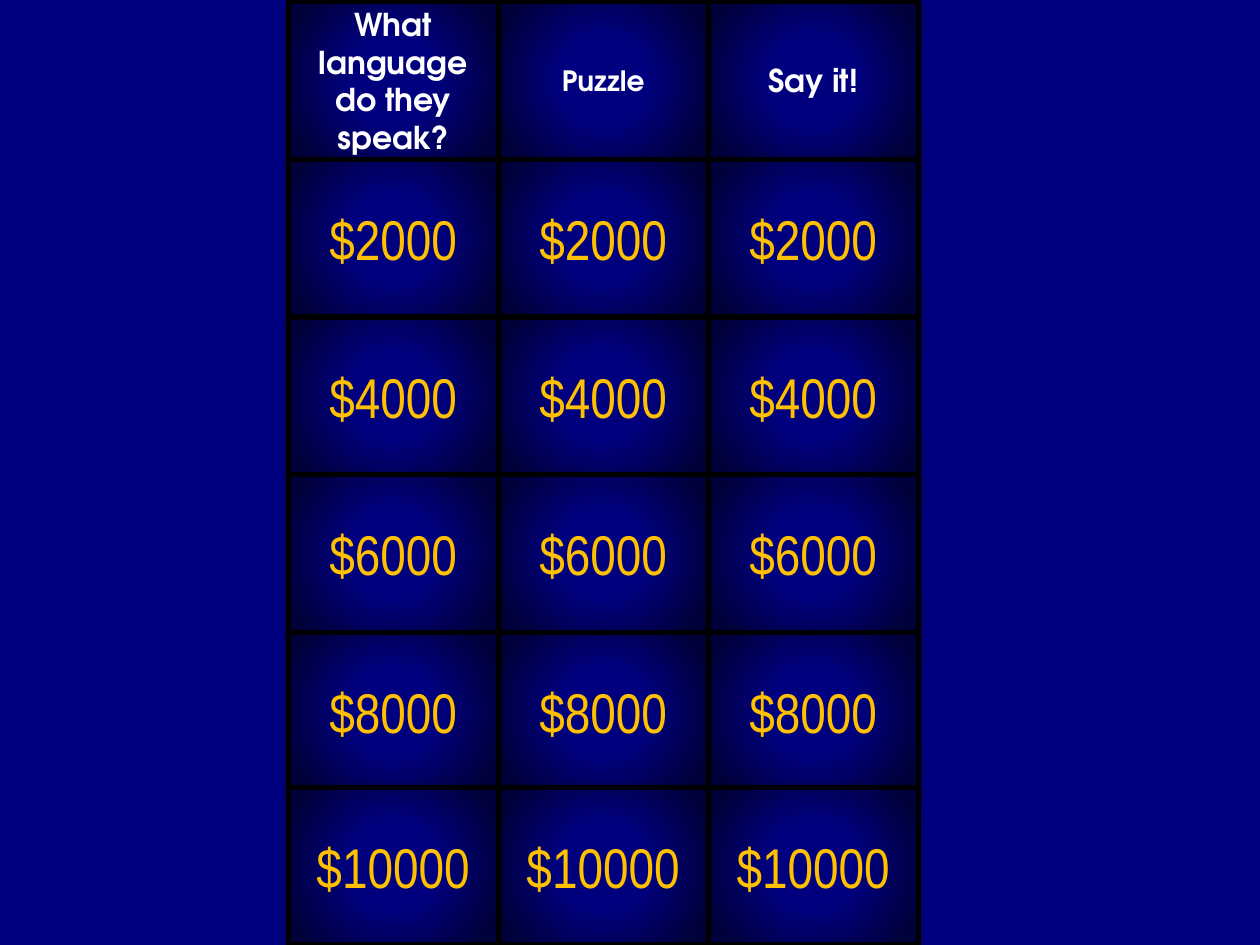
from dataclasses import dataclass

from lxml.etree import fromstring
from pptx import Presentation
from pptx.dml.color import RGBColor
from pptx.enum.shapes import MSO_SHAPE
from pptx.enum.text import MSO_ANCHOR, PP_ALIGN
from pptx.oxml.ns import nsdecls
from pptx.util import Cm, Pt


@dataclass(frozen=True)
class Theme:
    back: str = "00007F"
    edge: str = "00003A"
    line: str = "000000"
    head: str = "FFFFFF"
    money: str = "FFC000"
    head_font: str = "TeX Gyre Adventor"
    money_font: str = "Arial Narrow"
    head_size: int = 18
    small_head_size: int = 16
    money_size: int = 32
    line_width: int = 3


THEME = Theme()
CATEGORIES = [
    ("What language do they speak?", THEME.head_size),
    ("Puzzle", THEME.small_head_size),
    ("Say it!", THEME.head_size),
]
PRIZES = ["$2000", "$4000", "$6000", "$8000", "$10000"]
DRAW_ORDER = (1, 2, 0)
CELL_HEIGHT = 3.18

GRADIENT = f"""<a:gradFill {nsdecls("a")} rotWithShape="1"><a:gsLst>
<a:gs pos="33000"><a:srgbClr val="{THEME.back}"/></a:gs>
<a:gs pos="87000"><a:srgbClr val="{THEME.edge}"/></a:gs>
</a:gsLst><a:path path="circle">
<a:fillToRect l="50000" t="50000" r="50000" b="50000"/></a:path></a:gradFill>"""

SHADOW = f"""<a:effectLst {nsdecls("a")}>
<a:outerShdw blurRad="40000" dist="23000" dir="5400000" rotWithShape="0">
<a:srgbClr val="{THEME.line}"><a:alpha val="35000"/></a:srgbClr>
</a:outerShdw></a:effectLst>"""


def add_cell(s, box, text, font, color):
    sp = s.shapes.add_shape(MSO_SHAPE.RECTANGLE, *(Cm(v) for v in box))
    sp.line.color.rgb = RGBColor.from_string(THEME.line)
    sp.line.width = Pt(THEME.line_width)
    sp.line._ln.addprevious(fromstring(GRADIENT))
    sp._element.spPr.append(fromstring(SHADOW))
    tf = sp.text_frame
    tf.word_wrap = True
    tf.vertical_anchor = MSO_ANCHOR.MIDDLE
    p = tf.paragraphs[0]
    p.alignment = PP_ALIGN.CENTER
    r = p.add_run()
    r.text = text
    for name, value in font.items():
        setattr(r.font, name, value)
    r.font.color.rgb = RGBColor.from_string(color)


def add_board(s, left, top, width, height):
    cell_width = width / len(CATEGORIES)

    def cell_box(row, col):
        y = min(row * CELL_HEIGHT, height - CELL_HEIGHT)
        return left + col * cell_width, top + y, cell_width, CELL_HEIGHT

    for col in DRAW_ORDER:
        text, size = CATEGORIES[col]
        font = {"name": THEME.head_font, "size": Pt(size), "bold": True}
        add_cell(s, cell_box(0, col), text, font, THEME.head)

    font = {"name": THEME.money_font, "size": Pt(THEME.money_size)}
    for row, prize in enumerate(PRIZES, start=1):
        for col in DRAW_ORDER:
            add_cell(s, cell_box(row, col), prize, font, THEME.money)


def main():
    prs = Presentation()
    prs.slide_width, prs.slide_height = Cm(25.4), Cm(19.05)
    s = prs.slides.add_slide(prs.slide_layouts[6])
    fill = s.background.fill
    fill.solid()
    fill.fore_color.rgb = RGBColor.from_string(THEME.back)
    add_board(s, 5.81, 0.03, 12.7, 19.02)
    prs.save("out.pptx")


if __name__ == "__main__":
    main()
